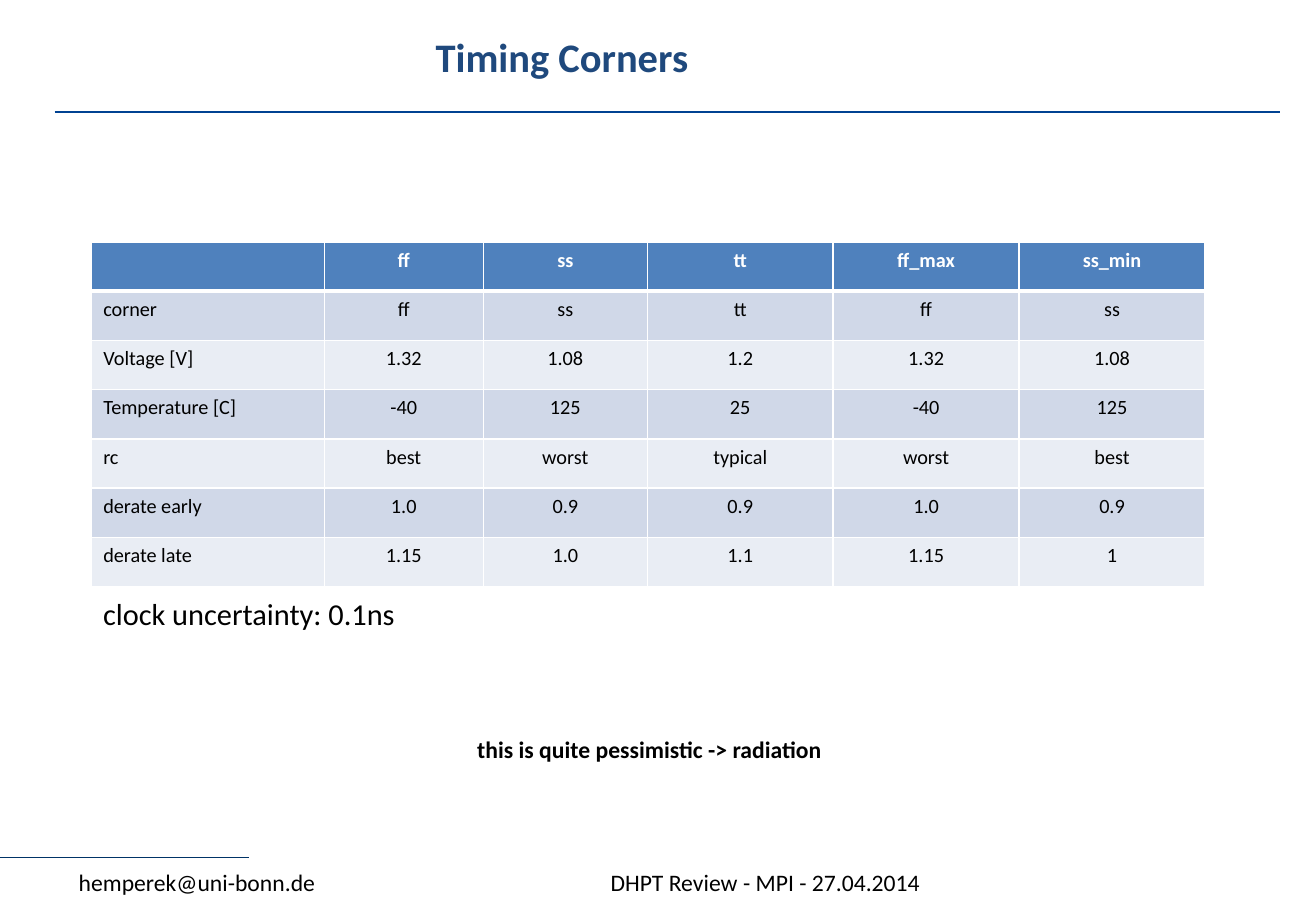
from dataclasses import dataclass

import lxml.etree
import pptx
import pptx.dml.color
import pptx.enum.shapes
import pptx.enum.text
import pptx.oxml.ns
import pptx.slide
import pptx.table
import pptx.text.text
import pptx.util

Pt = pptx.util.Pt
Align = pptx.enum.text.PP_ALIGN
Anchor = pptx.enum.text.MSO_ANCHOR
qn = pptx.oxml.ns.qn

COLORS = {
    "title": "1F497D",
    "text": "000000",
    "title rule": "004292",
    "footer rule": "003366",
    "header": "4F81BD",
    "odd row": "D0D8E8",
    "even row": "E9EDF4",
    "white": "FFFFFF",
}

# Timing table
TABLE_LEFT, TABLE_TOP, ROW_HEIGHT = 54, 143.4, 29.2
COLUMN_WIDTHS = [138.2, 94.3, 97.2, 110.2, 110.2, 110.2]
CORNERS = [
    ["", "ff", "ss", "tt", "ff_max", "ss_min"],
    ["corner", "ff", "ss", "tt", "ff", "ss"],
    ["Voltage [V]", "1.32", "1.08", "1.2", "1.32", "1.08"],
    ["Temperature [C]", "-40", "125", "25", "-40", "125"],
    ["rc", "best", "worst", "typical", "worst", "best"],
    ["derate early", "1.0", "0.9", "0.9", "1.0", "0.9"],
    ["derate late", "1.15", "1.0", "1.1", "1.15", "1"],
]


@dataclass
class Rule:
    left: float
    right: float
    top: float
    color: str
    weight: float


@dataclass
class Label:
    text: str
    left: float
    top: float
    width: float
    height: float
    size: float
    bold: bool = False
    wrap: bool = True
    align: Align = Align.LEFT
    anchor: Anchor = Anchor.TOP


RULES = [
    Rule(32.4, 758.9, 66.5, "title rule", 1.5),
    Rule(0, 147.6, 508.3, "footer rule", 0.75),
]
LABELS = [
    Label("hemperek@uni-bonn.de", 39.6, 508.3, 220.3, 28.8, 14, anchor=Anchor.MIDDLE),
    Label("DHPT Review - MPI - 27.04.2014", 267.1, 508.3, 373, 28.8, 14,
          align=Align.CENTER, anchor=Anchor.MIDDLE),
    Label("clock uncertainty: 0.1ns", 54, 349.2, 189.4, 29.1, 18, wrap=False),
    Label("this is quite pessimistic -> radiation", 275.8, 432, 221, 24.2, 14,
          bold=True, wrap=False),
]


def rgb(name: str) -> pptx.dml.color.RGBColor:
    return pptx.dml.color.RGBColor.from_string(COLORS[name])


def write(frame: pptx.text.text.TextFrame, text: str, size: float, color: str,
          bold: bool, align: Align) -> None:
    paragraph = frame.paragraphs[0]
    paragraph.alignment = align
    run = paragraph.add_run()
    run.text = text
    formats = {"name": "Calibri", "size": Pt(size), "bold": bold}
    for attribute, value in formats.items():
        setattr(run.font, attribute, value)
    run.font.color.rgb = rgb(color)


def draw_rule(slide: pptx.slide.Slide, rule: Rule) -> None:
    line = slide.shapes.add_connector(
        pptx.enum.shapes.MSO_CONNECTOR.STRAIGHT,
        Pt(rule.left), Pt(rule.top), Pt(rule.right), Pt(rule.top))
    line.line.color.rgb = rgb(rule.color)
    line.line.width = Pt(rule.weight)
    lxml.etree.SubElement(line._element.spPr, qn("a:effectLst"))


def draw_label(slide: pptx.slide.Slide, label: Label) -> None:
    box = slide.shapes.add_textbox(
        Pt(label.left), Pt(label.top), Pt(label.width), Pt(label.height))
    box.text_frame.word_wrap = label.wrap
    box.text_frame.vertical_anchor = label.anchor
    write(box.text_frame, label.text, label.size, "text", label.bold, label.align)


def set_borders(cell: pptx.table._Cell, bottom: float) -> None:
    properties = cell._tc.get_or_add_tcPr()
    weights = {"a:lnL": 1, "a:lnR": 1, "a:lnT": 1, "a:lnB": bottom}
    for position, (side, weight) in enumerate(weights.items()):
        border = lxml.etree.Element(qn(side), w=str(Pt(weight)))
        fill = lxml.etree.SubElement(border, qn("a:solidFill"))
        lxml.etree.SubElement(fill, qn("a:srgbClr"), val=COLORS["white"])
        properties.insert(position, border)


def draw_table(slide: pptx.slide.Slide) -> None:
    corners = slide.shapes.add_table(
        len(CORNERS), len(COLUMN_WIDTHS), Pt(TABLE_LEFT), Pt(TABLE_TOP),
        Pt(sum(COLUMN_WIDTHS)), Pt(ROW_HEIGHT * len(CORNERS))).table
    for column, width in zip(corners.columns, COLUMN_WIDTHS):
        column.width = Pt(width)
    for row, values in enumerate(CORNERS):
        corners.rows[row].height = Pt(ROW_HEIGHT)
        header = row == 0
        fill = "header" if header else "odd row" if row % 2 else "even row"
        for column, value in enumerate(values):
            cell = corners.cell(row, column)
            cell.fill.solid()
            cell.fill.fore_color.rgb = rgb(fill)
            # The header has a heavy line below it
            set_borders(cell, 3 if header or row == 1 and False else 1)
            write(cell.text_frame, value, 12, "white" if header else "text",
                  header, Align.CENTER if column else Align.LEFT)
    # Row 1 shares the heavy line of the header
    for cell in corners.rows[1].cells:
        cell._tc.tcPr.find(qn("a:lnT")).set("w", str(Pt(3)))


def draw_title(slide: pptx.slide.Slide) -> None:
    title = slide.shapes.title
    place = {"left": 38.2, "top": 15.1, "width": 589.7, "height": 45.4}
    for attribute, value in place.items():
        setattr(title, attribute, Pt(value))
    title.text_frame.auto_size = pptx.enum.text.MSO_AUTO_SIZE.NONE
    title.text_frame.vertical_anchor = Anchor.TOP
    write(title.text_frame, "Timing Corners", 24, "title", True, Align.CENTER)


def main() -> None:
    deck = pptx.Presentation()
    deck.slide_width, deck.slide_height = Pt(780), Pt(540)
    slide = deck.slides.add_slide(deck.slide_layouts[5])
    # Title and rules
    draw_title(slide)
    for rule in RULES:
        draw_rule(slide, rule)
    # Table, notes and footer
    draw_table(slide)
    for label in LABELS:
        draw_label(slide, label)
    deck.save("out.pptx")


if __name__ == "__main__":
    main()
